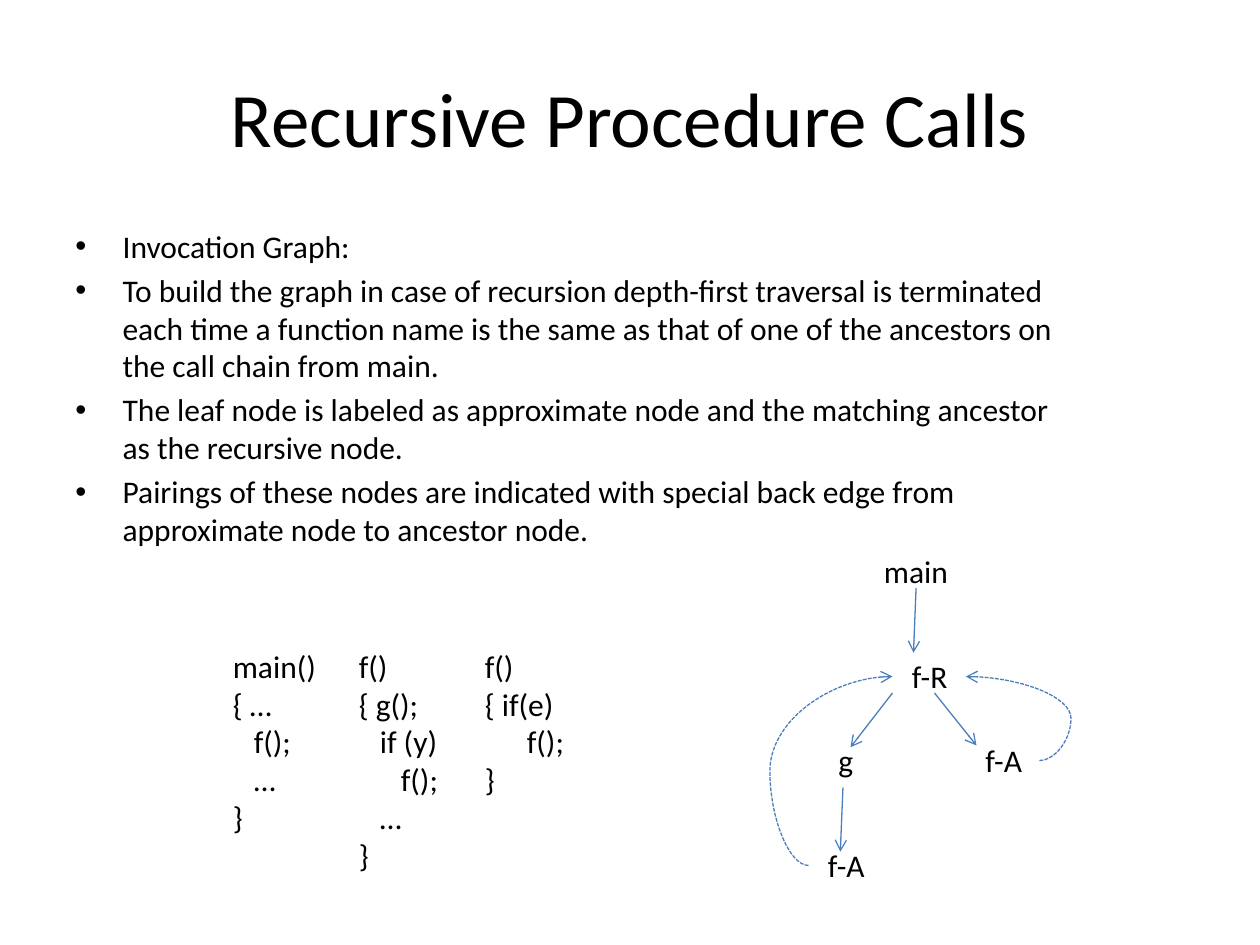
from dataclasses import dataclass

from lxml import etree
from pptx import Presentation
from pptx import util as u
from pptx.dml.color import RGBColor
from pptx.enum import dml, shapes, text
from pptx.oxml import ns

BLACK = RGBColor(0x00, 0x00, 0x00)
BLUE = RGBColor(0x4B, 0x7E, 0xBC)
FONT = "Calibri"
TEXT_SIZE = 18
CODE_TOP = 366
CODE_STEP = 12


@dataclass(frozen=True)
class Code:
    left: float
    width: float
    height: float
    lines: tuple[tuple[int, str], ...]


@dataclass(frozen=True)
class Node:
    label: str
    left: float
    top: float
    width: float
    wrap: bool = True


@dataclass(frozen=True)
class Edge:
    start: tuple[float, float]
    end: tuple[float, float]
    bend: float | None = None


BULLETS = (
    "Invocation Graph:",
    "To build the graph in case of recursion depth-first traversal is terminated "
    "each time a function name is the same as that of one of the ancestors on "
    "the call chain from main.",
    "The leaf node is labeled as approximate node and the matching ancestor "
    "as the recursive node.",
    "Pairings of these nodes are indicated with special back edge from "
    "approximate node to ancestor node.",
)

LISTINGS = (
    Code(126, 66, 116.6, ((0, "main()"), (0, "{ …"), (1, "f();"), (1, "…"), (0, "}"))),
    Code(198, 72, 138.2, ((0, "f()"), (0, "{ g();"), (1, "if (y)"), (2, "f();"),
                          (1, "…"), (0, "}"))),
    Code(270, 72, 94.3, ((0, "f()"), (0, "{ if(e)"), (2, "f();"), (0, "}"))),
)

NODES = (
    Node("main", 498, 312, 51.8, wrap=False),
    Node(" f-R", 510, 372, 42),
    Node(" f-A", 462, 480, 48),
    Node(" f-A", 552, 420, 42),
    Node(" g", 468, 420, 36),
)

EDGES = (
    Edge((523.5, 336), (522, 373)),
    Edge((510, 396), (486, 427)),
    Edge((534, 396), (558, 426)),
    Edge((481.7, 450), (480.2, 486.7)),
    Edge((462, 494.6), (510, 386.6), bend=-0.46),
    Edge((594, 434.6), (552, 386.6), bend=-0.43),
)


def style(para, size: float = TEXT_SIZE) -> None:
    para.font.name = FONT
    para.font.size = u.Pt(size)
    para.font.color.rgb = BLACK


def add_box(page, left: float, top: float, width: float, height: float,
            lines: list[str], wrap: bool = True) -> list:
    box = page.shapes.add_textbox(u.Pt(left), u.Pt(top), u.Pt(width), u.Pt(height))
    frame = box.text_frame
    frame.word_wrap = wrap
    frame.text = "\n".join(lines)
    for para in frame.paragraphs:
        style(para)
    return list(frame.paragraphs)


def set_indent(para, left: float, hanging: float = 0):
    properties = para._p.get_or_add_pPr()
    properties.set("marL", str(u.Pt(left)))
    properties.set("indent", str(u.Pt(-hanging)))
    return properties


def add_title(page) -> None:
    title = page.shapes.title
    title.left, title.top = u.Pt(36), u.Pt(21.6)
    title.width, title.height = u.Pt(648), u.Pt(90)
    title.text_frame.text = "Recursive Procedure Calls"
    title.text_frame.vertical_anchor = text.MSO_ANCHOR.MIDDLE
    para = title.text_frame.paragraphs[0]
    para.alignment = text.PP_ALIGN.CENTER
    style(para, 44)


def add_bullets(page) -> None:
    for para in add_box(page, 36, 126, 576, 222, list(BULLETS)):
        para.space_before = u.Pt(3.6)
        properties = set_indent(para, 27, 27)
        font = etree.SubElement(properties, ns.qn("a:buFont"))
        font.set("typeface", "Arial")
        bullet = etree.SubElement(properties, ns.qn("a:buChar"))
        bullet.set("char", "•")


def add_code(page, code: Code) -> None:
    lines = [line for _, line in code.lines]
    paras = add_box(page, code.left, CODE_TOP, code.width, code.height, lines)
    for para, (depth, _) in zip(paras, code.lines):
        set_indent(para, depth * CODE_STEP)


def add_node(page, node: Node) -> None:
    add_box(page, node.left, node.top, node.width, 29, [node.label], node.wrap)


def add_edge(page, edge: Edge) -> None:
    curved = edge.bend is not None
    kind = shapes.MSO_CONNECTOR.CURVE if curved else shapes.MSO_CONNECTOR.STRAIGHT
    points = [u.Pt(value) for value in (*edge.start, *edge.end)]
    connector = page.shapes.add_connector(kind, *points)
    connector.line.color.rgb = BLUE
    connector.line.width = u.Pt(0.75)
    properties = connector._element.spPr
    if curved:
        connector.line.dash_style = dml.MSO_LINE.SQUARE_DOT
        geometry = properties.find(ns.qn("a:prstGeom"))
        guides = geometry.find(ns.qn("a:avLst"))
        if guides is None:
            guides = etree.SubElement(geometry, ns.qn("a:avLst"))
        guide = etree.SubElement(guides, ns.qn("a:gd"))
        guide.set("name", "adj1")
        guide.set("fmla", f"val {round(edge.bend * 100000)}")
    line = properties.find(ns.qn("a:ln"))
    etree.SubElement(line, ns.qn("a:tailEnd")).set("type", "arrow")
    etree.SubElement(properties, ns.qn("a:effectLst"))


def main() -> None:
    deck = Presentation()
    deck.slide_width, deck.slide_height = u.Pt(720), u.Pt(540)
    page = deck.slides.add_slide(deck.slide_layouts.get_by_name("Title Only"))
    add_title(page)
    add_bullets(page)
    for code in LISTINGS:
        add_code(page, code)
    for node in NODES:
        add_node(page, node)
    for edge in EDGES:
        add_edge(page, edge)
    deck.save("out.pptx")


if __name__ == "__main__":
    main()
